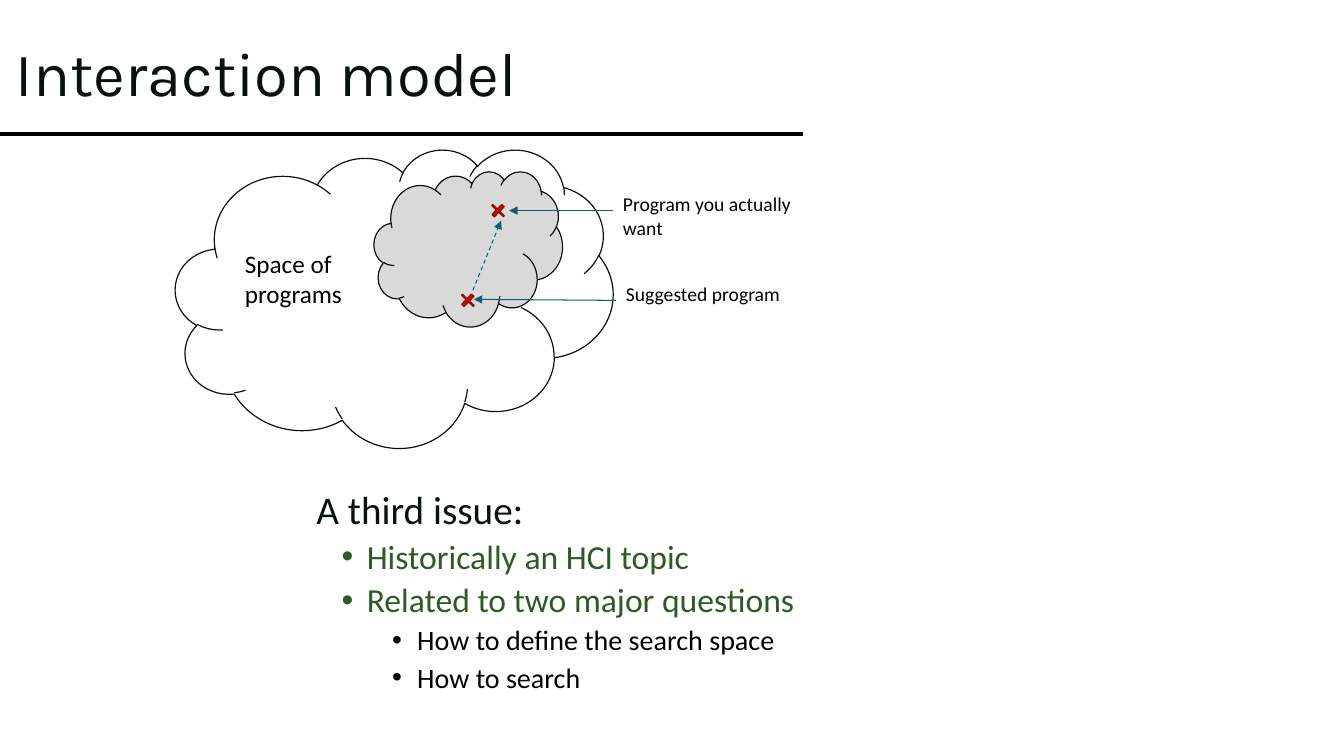
from lxml.etree import SubElement
from pptx import Presentation
from pptx.dml.color import RGBColor
from pptx.enum.dml import MSO_LINE_DASH_STYLE as DASH
from pptx.enum.shapes import MSO_CONNECTOR, MSO_SHAPE as SHAPE
from pptx.enum.text import MSO_ANCHOR, MSO_AUTO_SIZE as AUTO
from pptx.oxml.ns import qn
from pptx.util import Pt

PX = 9144
BLACK = RGBColor(0x00, 0x00, 0x00)
WHITE = RGBColor(0xFF, 0xFF, 0xFF)
INK = RGBColor(0x08, 0x11, 0x0B)
GREY = RGBColor(0xD9, 0xD9, 0xD9)
RED = RGBColor(0xCD, 0x09, 0x09)
DARK_RED = RGBColor(0x98, 0x07, 0x07)
TEAL = RGBColor(0x17, 0x5B, 0x73)
GREEN = RGBColor(0x2F, 0x5A, 0x24)

LEVELS = [(25, 28, INK, 10), (75, 24, GREEN, 5), (125, 20, BLACK, 5)]
ISSUES = [
    (0, "A third issue:"),
    (1, "Historically an HCI topic"),
    (1, "Related to two major questions"),
    (2, "How to define the search space"),
    (2, "How to search"),
]


def emu(*lengths):
    return [n * PX for n in lengths]


def style_run(p, size, color, font="Calibri"):
    f = p.runs[0].font
    f.name, f.size = font, Pt(size)
    f.color.rgb = color


def add_text(s, x, y, w, h, text="", size=18, color=BLACK, font="Calibri", grow=True):
    tf = s.shapes.add_textbox(*emu(x, y, w, h)).text_frame
    tf.word_wrap = True
    tf.auto_size = AUTO.SHAPE_TO_FIT_TEXT if grow else AUTO.NONE
    if text:
        tf.text = text
        style_run(tf.paragraphs[0], size, color, font)
    return tf


def add_shape(s, kind, x, y, w, h, fill, line):
    sp = s.shapes.add_shape(kind, *emu(x, y, w, h))
    sp.shadow.inherit = False
    sp.fill.solid()
    sp.fill.fore_color.rgb = fill
    sp.line.color.rgb = line
    sp.line.width = Pt(0.85)
    return sp


def add_line(s, x1, y1, x2, y2, color, width):
    line = s.shapes.add_connector(MSO_CONNECTOR.STRAIGHT, *emu(x1, y1, x2, y2))
    line.line.color.rgb = color
    line.line.width = Pt(width)
    SubElement(line._element.spPr, qn("a:effectLst"))
    return line


def add_arrow(s, x1, y1, x2, y2):
    arrow = add_line(s, x1, y1, x2, y2, TEAL, 0.75)
    SubElement(arrow.line._get_or_add_ln(), qn("a:tailEnd"), type="triangle")
    return arrow


def add_cross(s, x, y):
    cross = add_shape(s, SHAPE.CROSS, x, y, 16, 14, RED, DARK_RED)
    cross.adjustments[0] = 0.45
    cross.rotation = 43.9


def add_header(s, x, y, w, h):
    add_line(s, 0, y + 130, 796, y + 130, BLACK, 2.25)
    tf = add_text(s, x, y, w, h, "Interaction model", 44, INK, "Karla", grow=False)
    tf.vertical_anchor = MSO_ANCHOR.MIDDLE
    tf.paragraphs[0].line_spacing = 0.9


def add_program_space(s, x, y, w, h):
    add_shape(s, SHAPE.CLOUD, x, y, w, h, WHITE, INK)
    add_text(s, x + 59, y + 93, 187, 71, "Space of programs")
    add_shape(s, SHAPE.CLOUD, x + 197, y + 22, 187, 154, GREY, INK)

    add_cross(s, x + 312, y + 54)
    add_arrow(s, x + w, y + 61, x + 331, y + 61)
    add_text(s, x + w, y + 38, 187, 57, "Program you actually want", 14)

    add_cross(s, x + 282, y + 143)
    add_arrow(s, x + w + 3, y + 150, x + 296, y + 149)
    add_text(s, x + w + 3, y + 127, 187, 34, "Suggested program", 14)

    add_arrow(s, x + 295, y + 140, x + 323, y + 71).line.dash_style = DASH.DASH


def add_bullet(p, indent, hidden):
    pPr = p._p.get_or_add_pPr()
    pPr.set("marL", str(indent * PX))
    pPr.set("indent", str(-25 * PX))
    if hidden:
        SubElement(SubElement(pPr, qn("a:buClr")), qn("a:srgbClr"), val=str(WHITE))
        SubElement(pPr, qn("a:buSzPct"), val="25000")
    SubElement(pPr, qn("a:buFont"), typeface="Arial")
    SubElement(pPr, qn("a:buChar"), char="•")


def add_issues(s, x, y, w, h):
    tf = add_text(s, x, y, w, h, grow=False)
    tf.text = "\n".join(text for _, text in ISSUES)
    for p, (level, _) in zip(tf.paragraphs, ISSUES):
        indent, size, color, before = LEVELS[level]
        p.level = level
        p.line_spacing = 0.9
        p.space_before = Pt(before)
        add_bullet(p, indent, hidden=level == 0)
        style_run(p, size, color)


def main():
    prs = Presentation()
    prs.slide_width, prs.slide_height = emu(1333, 750)
    s = prs.slides.add_slide(prs.slide_layouts[6])
    add_header(s, 6, 3, 751, 145)
    add_program_space(s, 174, 148, 434, 296)
    add_issues(s, 279, 482, 777, 236)
    prs.save("out.pptx")


if __name__ == "__main__":
    main()
